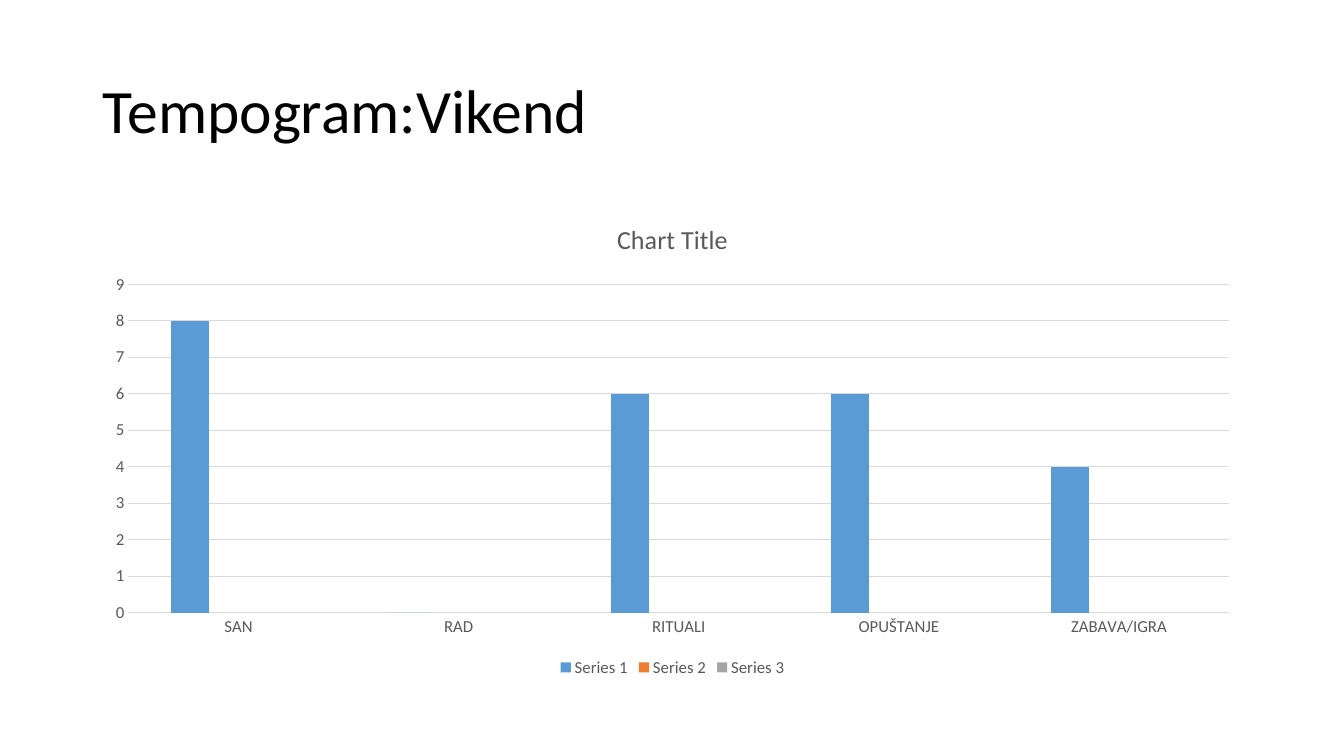
import pptx
import pptx.chart.data
import pptx.dml.color
import pptx.enum.chart
import pptx.enum.text
import pptx.util
from pptx.util import Inches

COLORS = {"title": "000000", "label": "595959", "rule": "D9D9D9"}
CATEGORIES = ["SAN", "RAD", "RITUALI", "OPUŠTANJE", "ZABAVA/IGRA"]
SERIES = [
    ("Series 1", [8, 0, 6, 6, 4], "5B9BD5"),
    ("Series 2", [None] * 5, "ED7D31"),
    ("Series 3", [None] * 5, "A5A5A5"),
]


def rgb(value):
    return pptx.dml.color.RGBColor.from_string(value)


def style_font(font, size, color):
    font.name = "Calibri"
    font.size = pptx.util.Pt(size)
    font.bold = False
    font.color.rgb = rgb(color)


deck = pptx.Presentation()
deck.slide_width, deck.slide_height = Inches(13.33), Inches(7.5)
page = deck.slides.add_slide(deck.slide_layouts[5])

# Title
title = page.shapes.title
title.left, title.top = Inches(0.92), Inches(0.4)
title.width, title.height = Inches(11.5), Inches(1.45)
title.text_frame.vertical_anchor = pptx.enum.text.MSO_ANCHOR.MIDDLE
para = title.text_frame.paragraphs[0]
para.alignment = pptx.enum.text.PP_ALIGN.LEFT
para.line_spacing = 0.9
span = para.add_run()
span.text = "Tempogram:Vikend"
style_font(span.font, 44, COLORS["title"])

# Weekend chart
data = pptx.chart.data.CategoryChartData()
data.categories = CATEGORIES
for name, values, color in SERIES:
    data.add_series(name, values)
chart = page.shapes.add_chart(
    pptx.enum.chart.XL_CHART_TYPE.COLUMN_CLUSTERED,
    Inches(0.92), Inches(2), Inches(11.5), Inches(4.76), data,
).chart
style_font(chart.font, 12, COLORS["label"])

chart.has_title = True
heading = chart.chart_title.text_frame.paragraphs[0].add_run()
heading.text = "Chart Title"
style_font(heading.font, 18.6, COLORS["label"])

chart.has_legend = True
chart.legend.position = pptx.enum.chart.XL_LEGEND_POSITION.BOTTOM
chart.legend.include_in_layout = False
style_font(chart.legend.font, 12, COLORS["label"])

plot = chart.plots[0]
plot.gap_width = 219
plot.overlap = -27
plot.vary_by_categories = False
for series, (name, values, color) in zip(plot.series, SERIES):
    series.format.fill.solid()
    series.format.fill.fore_color.rgb = rgb(color)
    series.invert_if_negative = False

for axis in (chart.category_axis, chart.value_axis):
    axis.major_tick_mark = pptx.enum.chart.XL_TICK_MARK.NONE
    axis.minor_tick_mark = pptx.enum.chart.XL_TICK_MARK.NONE
    style_font(axis.tick_labels.font, 12, COLORS["label"])

chart.value_axis.has_major_gridlines = True
chart.value_axis.format.line.fill.background()
chart.value_axis.minimum_scale = 0
chart.value_axis.maximum_scale = 9
chart.value_axis.major_unit = 1
for line in (chart.category_axis.format.line,
             chart.value_axis.major_gridlines.format.line):
    line.color.rgb = rgb(COLORS["rule"])
    line.width = pptx.util.Pt(0.75)

deck.save("out.pptx")
